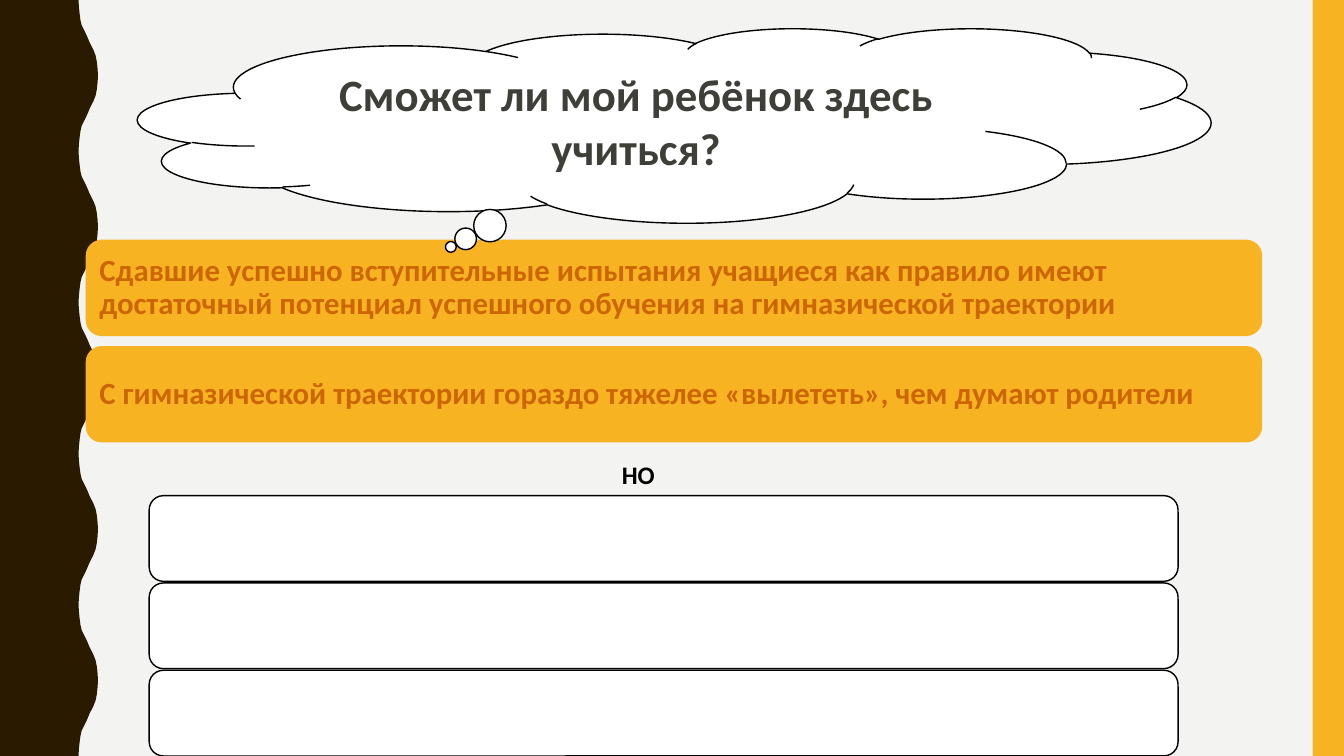
from dataclasses import dataclass
from typing import Optional

from pptx import Presentation
from pptx.dml.color import RGBColor
from pptx.enum import shapes, text
from pptx.util import Cm, Pt

PAPER = RGBColor(0xF3, 0xF3, 0xF2)
BROWN = RGBColor(0x2A, 0x1A, 0x00)
AMBER = RGBColor(0xF8, 0xB3, 0x23)
ORANGE = RGBColor(0xCC, 0x66, 0x00)
GRAPHITE = RGBColor(0x3F, 0x3F, 0x3A)
WHITE = RGBColor(0xFF, 0xFF, 0xFF)
BLACK = RGBColor(0x00, 0x00, 0x00)

FONT = "Calibri"
WIDTH, HEIGHT = 33.87, 19.05
WAVE_PERIOD = HEIGHT / 5
HALF_WAVE = [
    (1.98, 0), (1.99, 0.18), (2.01, 0.36), (2.03, 0.51), (2.06, 0.64),
    (2.11, 0.74), (2.16, 0.84), (2.21, 0.95), (2.26, 1.07), (2.31, 1.17),
    (2.36, 1.27), (2.41, 1.4), (2.44, 1.55), (2.46, 1.73), (2.47, 1.9),
]


@dataclass
class Label:
    text: str
    size: float
    color: RGBColor
    align: text.PP_ALIGN = text.PP_ALIGN.LEFT
    spacing: float = 1.0
    inset: Optional[float] = None


@dataclass
class Block:
    kind: shapes.MSO_SHAPE
    left: float
    top: float
    width: float
    height: float
    fill: RGBColor
    line: Optional[RGBColor] = None
    label: Optional[Label] = None


def paint(sp, fill: RGBColor, line: Optional[RGBColor] = None) -> None:
    sp.shadow.inherit = False
    sp.fill.solid()
    sp.fill.fore_color.rgb = fill
    if line is None:
        sp.line.fill.background()
    else:
        sp.line.color.rgb = line
        sp.line.width = Pt(1)


def write(tf, label: Label) -> None:
    tf.word_wrap = True
    if label.inset is not None:
        tf.margin_left = tf.margin_right = Cm(label.inset)
        tf.margin_top = tf.margin_bottom = Cm(label.inset)
    p = tf.paragraphs[0]
    p.text = label.text
    p.alignment = label.align
    p.line_spacing = label.spacing
    p.font.name = FONT
    p.font.size = Pt(label.size)
    p.font.bold = True
    p.font.color.rgb = label.color


def add_block(s, block: Block) -> None:
    sp = s.shapes.add_shape(block.kind, Cm(block.left), Cm(block.top),
                            Cm(block.width), Cm(block.height))
    paint(sp, block.fill, block.line)
    if block.label:
        sp.text_frame.vertical_anchor = text.MSO_ANCHOR.MIDDLE
        write(sp.text_frame, block.label)


def add_wavy_edge(s) -> None:
    wave = HALF_WAVE + [(x, WAVE_PERIOD - y) for x, y in reversed(HALF_WAVE)]
    edge = [(Cm(x), Cm(y + i * WAVE_PERIOD)) for i in range(5) for x, y in wave]
    builder = s.shapes.build_freeform(0, 0)
    builder.add_line_segments(edge + [(0, Cm(HEIGHT))], close=True)
    paint(builder.convert_to_shape(), BROWN)


def add_caption(s, left: float, top: float, width: float, height: float,
                label: Label) -> None:
    sp = s.shapes.add_textbox(Cm(left), Cm(top), Cm(width), Cm(height))
    sp.text_frame.auto_size = text.MSO_AUTO_SIZE.SHAPE_TO_FIT_TEXT
    write(sp.text_frame, label)


def main() -> None:
    prs = Presentation()
    prs.slide_width, prs.slide_height = Cm(WIDTH), Cm(HEIGHT)
    s = prs.slides.add_slide(prs.slide_layouts[6])
    s.background.fill.solid()
    s.background.fill.fore_color.rgb = PAPER

    rounded = shapes.MSO_SHAPE.ROUNDED_RECTANGLE
    arguments = [
        "Сдавшие успешно вступительные испытания учащиеся как правило имеют "
        "достаточный потенциал успешного обучения на гимназической траектории",
        "С гимназической траектории гораздо тяжелее «вылететь», "
        "чем думают родители",
    ]
    question = Label("Сможет ли мой ребёнок здесь учиться?", 32, GRAPHITE,
                     text.PP_ALIGN.CENTER)

    add_wavy_edge(s)
    blocks = [Block(shapes.MSO_SHAPE.RECTANGLE, 33.08, 0, 0.79, HEIGHT, AMBER)]
    blocks += [
        Block(rounded, 2.16, 6.04 + i * 2.68, 29.65, 2.43, AMBER,
              label=Label(argument, 22, ORANGE, spacing=0.9, inset=0.23))
        for i, argument in enumerate(arguments)
    ]
    blocks.append(Block(shapes.MSO_SHAPE.CLOUD_CALLOUT, 3.48, 0.71, 27.03, 4.9,
                        WHITE, BLACK, question))
    blocks += [Block(rounded, 3.76, 12.49 + i * 2.2, 25.93, 2.16, WHITE, BLACK)
               for i in range(3)]
    for block in blocks:
        add_block(s, block)
    add_caption(s, 15.42, 11.46, 1.57, 1.02, Label("НО", 18, BLACK))

    prs.save("out.pptx")


if __name__ == "__main__":
    main()
